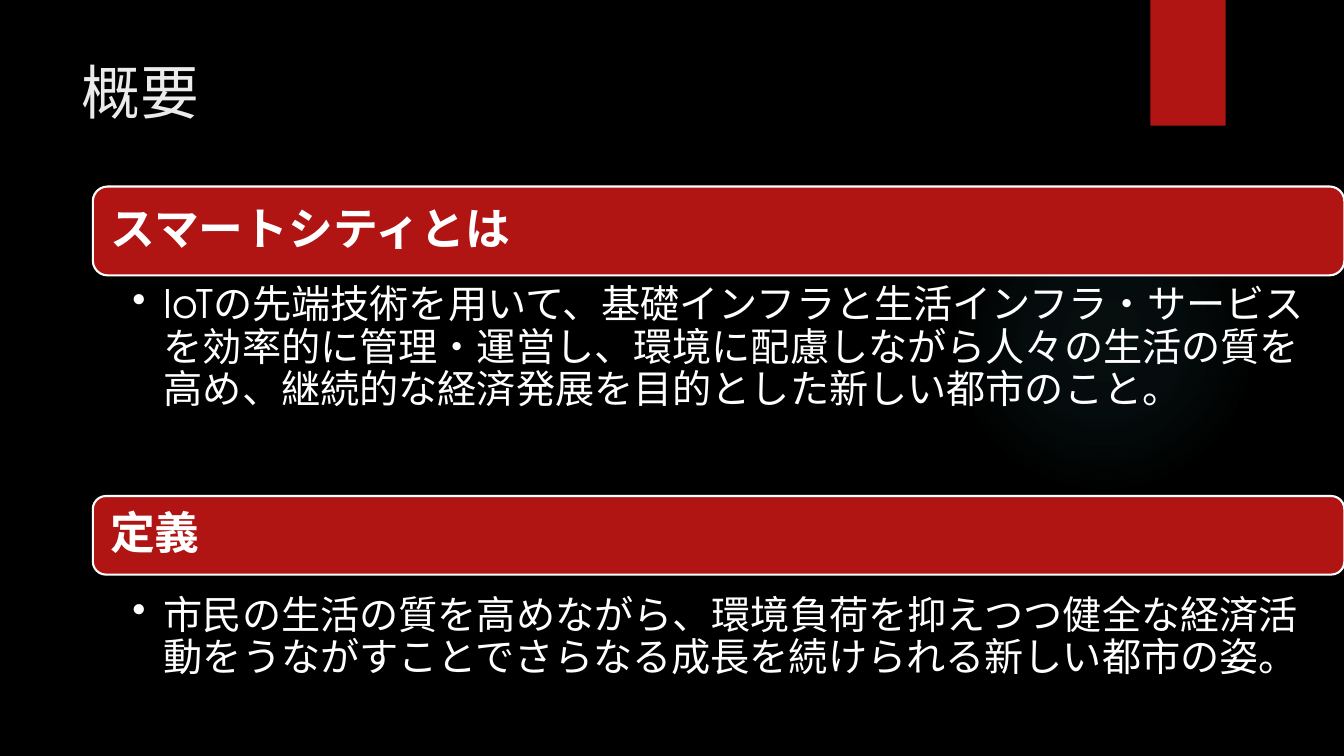
"""Build the overview slide on smart cities."""
import pptx
import pptx.dml.color
import pptx.enum.shapes
import pptx.enum.text
import pptx.oxml
import pptx.oxml.ns
import pptx.util

Cm = pptx.util.Cm
RGB = pptx.dml.color.RGBColor
KIND = pptx.enum.shapes.MSO_SHAPE
ANCHOR = pptx.enum.text.MSO_ANCHOR
BLACK = RGB(0x00, 0x00, 0x00)
WHITE = RGB(0xFF, 0xFF, 0xFF)
PALE = RGB(0xEB, 0xEB, 0xEB)
RED = RGB(0xB0, 0x15, 0x13)
TEAL = RGB(0x50, 0xB9, 0xC1)
FONT = "TeX Gyre Adventor"
SPACE = pptx.oxml.ns.nsdecls("a")


def write(shape, text, size, color=WHITE, bold=False, anchor=ANCHOR.TOP,
          inset=(0.25, 0.13, 0.25, 0.13), line=0.9, bullet=False):
    """Put one formatted paragraph into a shape."""
    frame = shape.text_frame
    frame.word_wrap = True
    frame.vertical_anchor = anchor
    frame.margin_left, frame.margin_top, frame.margin_right, frame.margin_bottom = map(Cm, inset)
    para = frame.paragraphs[0]
    para.alignment = pptx.enum.text.PP_ALIGN.LEFT
    para.line_spacing = line
    if bullet:
        props = para._p.get_or_add_pPr()
        props.set("marL", str(Cm(0.79)))
        props.set("indent", str(Cm(-0.79)))
        props.append(pptx.oxml.parse_xml(f'<a:buChar {SPACE} char="•"/>'))
    run = para.add_run()
    run.text = text
    run.font.size = pptx.util.Pt(size)
    run.font.bold = bold
    run.font.color.rgb = color
    run.font.name = FONT
    run._r.get_or_add_rPr().append(pptx.oxml.parse_xml(f'<a:ea {SPACE} typeface="{FONT}"/>'))


def draw(kind, left, top, width, height):
    """Add a red shape with no outline or shadow."""
    shape = slide.shapes.add_shape(kind, Cm(left), Cm(top), Cm(width), Cm(height))
    shape.shadow.inherit = False
    shape.fill.solid()
    shape.fill.fore_color.rgb = RED
    shape.line.fill.background()
    return shape


deck = pptx.Presentation()
deck.slide_width = Cm(33.87)
deck.slide_height = Cm(19.05)
slide = deck.slides.add_slide(deck.slide_layouts[6])
slide.background.fill.solid()
slide.background.fill.fore_color.rgb = BLACK

glow = draw(KIND.OVAL, 23.9, 4.65, 7.82, 7.82)
stops = "".join(
    f'<a:gs pos="{pos}000"><a:srgbClr val="{TEAL}"><a:alpha val="{alpha}000"/></a:srgbClr></a:gs>'
    for pos, alpha in [(0, 7), (36, 6), (69, 0)])
solid = glow._element.spPr.find(pptx.oxml.ns.qn("a:solidFill"))
solid.getparent().replace(solid, pptx.oxml.parse_xml(
    f'<a:gradFill {SPACE}><a:gsLst>{stops}</a:gsLst><a:path path="circle">'
    '<a:fillToRect l="50000" t="50000" r="50000" b="50000"/></a:path></a:gradFill>'))

draw(KIND.RECTANGLE, 28.99, 0, 1.9, 3.17)

title = slide.shapes.add_textbox(Cm(1.8), Cm(1.27), Cm(26.14), Cm(3.89))
write(title, "概要", 42, color=PALE, line=1.0)

LEFT, WIDTH = 2.34, 31.54
parts = [
    ("スマートシティとは", 4.7, 2.24,
     "IoTの先端技術を用いて、基礎インフラと生活インフラ・サービスを効率的に管理・運営し、"
     "環境に配慮しながら人々の生活の質を高め、継続的な経済発展を目的とした新しい都市のこと。",
     7.08, 5.43),
    ("定義", 12.5, 1.98,
     "市民の生活の質を高めながら、環境負荷を抑えつつ健全な経済活動をうながすことで"
     "さらなる成長を続けられる新しい都市の姿。",
     14.9, 3.68),
]
for head, top, height, body, low, depth in parts:
    bar = draw(KIND.ROUNDED_RECTANGLE, LEFT, top, WIDTH, height)
    bar.line.color.rgb = WHITE
    bar.line.width = pptx.util.Pt(1.5)
    write(bar, head, 32, bold=True, anchor=ANCHOR.MIDDLE, inset=(0.34, 0.34, 0.34, 0.34))
    box = slide.shapes.add_textbox(Cm(LEFT), Cm(low), Cm(WIDTH), Cm(depth))
    write(box, body, 28, inset=(1, 0.1, 0.56, 0.1), bullet=True)

deck.save("out.pptx")
